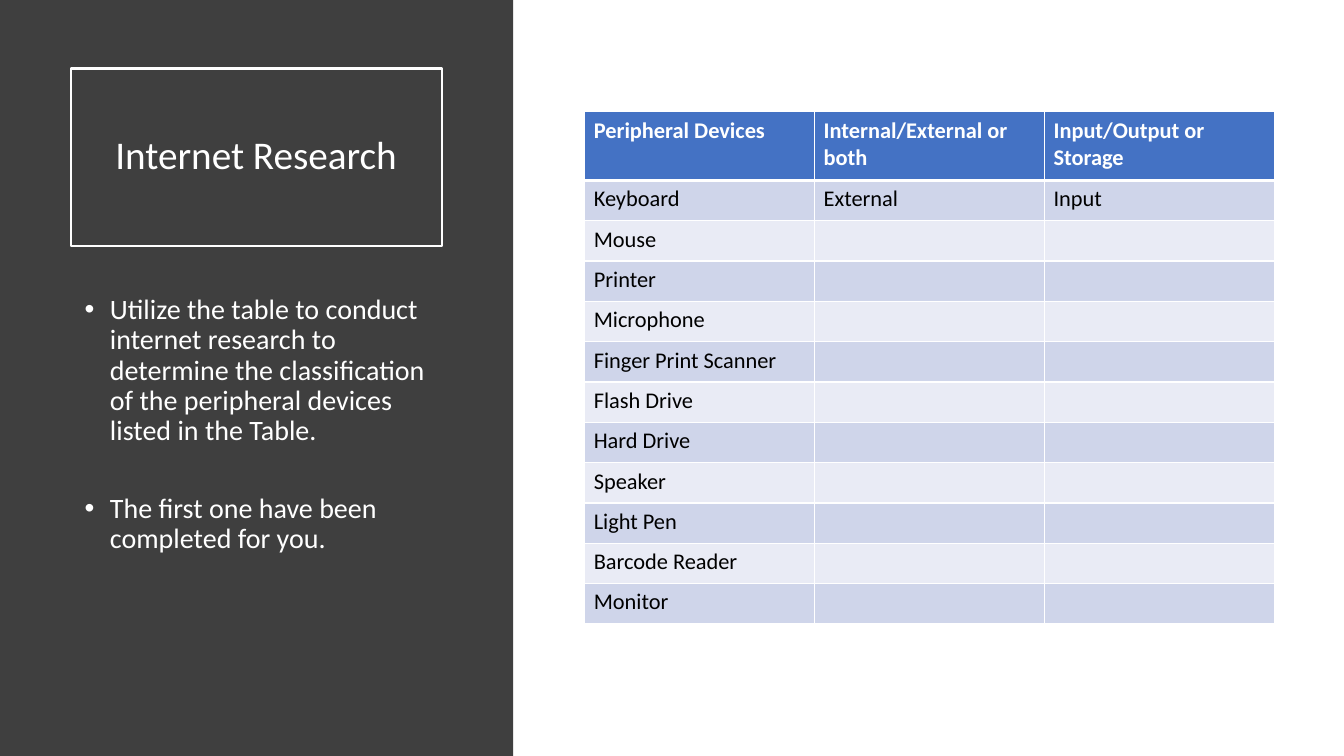
from dataclasses import dataclass

from lxml import etree
from pptx import Presentation
from pptx import util as u
from pptx.dml.color import RGBColor as Rgb
from pptx.enum import shapes, text
from pptx.oxml import ns


@dataclass
class Theme:
    font: str = "Calibri"
    white: str = "FFFFFF"
    black: str = "000000"
    panel: str = "3F3F3F"
    head: str = "4472C4"
    bands: tuple = ("E9EBF5", "CFD5EA")
    title: int = 28
    body: int = 20
    cell: int = 16


theme = Theme()


def style(para, size, color, bold=False):
    for run in para.runs:
        run.font.name = theme.font
        run.font.size = u.Pt(size)
        run.font.bold = bold
        run.font.color.rgb = Rgb.from_string(color)


def border(cell, side, width):
    line = etree.SubElement(cell._tc.get_or_add_tcPr(), ns.qn("a:" + side), w=str(u.Pt(width)))
    fill = etree.SubElement(line, ns.qn("a:solidFill"))
    etree.SubElement(fill, ns.qn("a:srgbClr"), val=theme.white)


deck = Presentation()
deck.slide_width, deck.slide_height = u.Inches(13.33), u.Inches(7.5)
slide = deck.slides.add_slide(deck.slide_layouts[1])

panel = slide.shapes.add_shape(shapes.MSO_SHAPE.RECTANGLE, 0, 0, u.Inches(5.09), deck.slide_height)
panel.shadow.inherit = False
panel.fill.solid()
panel.fill.fore_color.rgb = Rgb.from_string(theme.panel)
panel.line.fill.background()
slide.shapes._spTree.insert(2, panel._element)

title = slide.shapes.title
title.left, title.top = u.Inches(0.7), u.Inches(0.68)
title.width, title.height = u.Inches(3.68), u.Inches(1.76)
title.line.color.rgb = Rgb.from_string(theme.white)
title.line.width = u.Pt(1.5)
frame = title.text_frame
frame.text = "Internet Research"
frame.auto_size = text.MSO_AUTO_SIZE.NONE
frame.vertical_anchor = text.MSO_ANCHOR.MIDDLE
para = frame.paragraphs[0]
para.alignment = text.PP_ALIGN.CENTER
para.line_spacing = 0.9
style(para, theme.title, theme.white)

body = slide.placeholders[1]
body.left, body.top = u.Inches(0.7), u.Inches(2.88)
body.width, body.height = u.Inches(3.68), u.Inches(3.74)
frame = body.text_frame
frame.auto_size = text.MSO_AUTO_SIZE.NONE
frame.vertical_anchor = text.MSO_ANCHOR.TOP
tasks = [
    "Utilize the table to conduct internet research to determine the classification "
    "of the peripheral devices listed in the Table.",
    "The first one have been completed for you.",
]
frame.text = "\n".join(tasks)
for para, gap in zip(frame.paragraphs, (0, 28)):
    props = para._p.get_or_add_pPr()
    props.set("marL", str(u.Inches(0.29)))
    props.set("indent", str(u.Inches(-0.25)))
    etree.SubElement(props, ns.qn("a:buFont"), typeface="Arial")
    etree.SubElement(props, ns.qn("a:buChar"), char="•")
    para.line_spacing = 0.9
    para.space_before = u.Pt(gap)
    para.space_after = u.Pt(6)
    style(para, theme.body, theme.white)

names = [
    "Mouse", "Printer", "Microphone", "Finger Print Scanner", "Flash Drive",
    "Hard Drive", "Speaker", "Light Pen", "Barcode Reader", "Monitor",
]
rows = [
    ("Peripheral Devices", "Internal/External or both", "Input/Output or Storage"),
    ("Keyboard", "External", "Input"),
] + [(name, "", "") for name in names]

table = slide.shapes.add_table(
    len(rows), 3, u.Inches(5.8), u.Inches(1.11), u.Inches(6.84), u.Inches(5.1)
).table
for col in table.columns:
    col.width = u.Inches(2.28)
for i, row in enumerate(rows):
    top = i == 0
    table.rows[i].height = u.Inches(0.68 if top else 0.4)
    for j, label in enumerate(row):
        cell = table.cell(i, j)
        cell.margin_left = cell.margin_right = u.Inches(0.09)
        for side in ("lnL", "lnR", "lnT", "lnB"):
            thick = (top and side == "lnB") or (i == 1 and side == "lnT")
            border(cell, side, 3 if thick else 1)
        cell.fill.solid()
        cell.fill.fore_color.rgb = Rgb.from_string(theme.head if top else theme.bands[i % 2])
        cell.text_frame.text = label
        para = cell.text_frame.paragraphs[0]
        para._p.get_or_add_endParaRPr().set("sz", str(theme.cell * 100))
        style(para, theme.cell, theme.white if top else theme.black, top)

deck.save("out.pptx")
